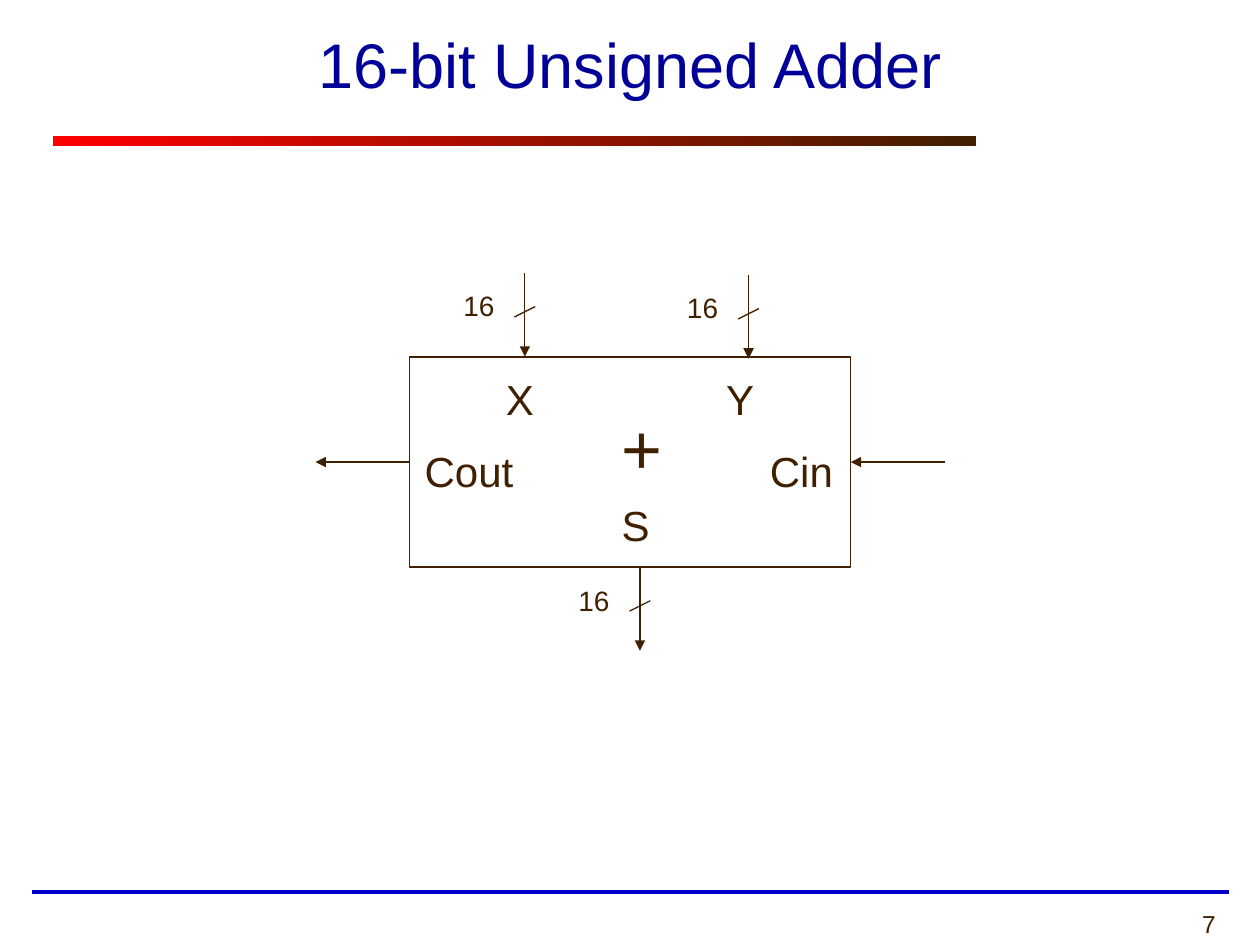
from dataclasses import dataclass

from lxml import etree
from pptx import Presentation
from pptx.dml.color import RGBColor
from pptx.enum import shapes, text
from pptx.oxml import ns
from pptx.util import Cm, Pt


@dataclass(frozen=True)
class Theme:
    font: str = "Arial"
    ink: RGBColor = RGBColor(0x40, 0x20, 0x00)
    title: RGBColor = RGBColor(0x00, 0x00, 0x99)
    rule: RGBColor = RGBColor(0x00, 0x00, 0xCC)
    accent: RGBColor = RGBColor(0xFF, 0x00, 0x00)
    title_size: int = 36
    operator_size: int = 40
    port_size: int = 24
    width_size: int = 16
    page_size: int = 14
    wire: float = 0.75
    footer: float = 2.25


THEME = Theme()
ADDER = (8.26, 7.2, 8.89, 4.23)
HANGING = {"marL": Cm(3.18), "indent": Cm(-0.64)}
BUSES = [(10.58, 5.5), (15.09, 5.54), (12.9, 11.43)]  # x, top
PORTS = [  # name, left, top, width
    ("X", 7.41, 7.41, 3.6),
    ("Y", 11.85, 7.41, 3.6),
    ("S", 9.74, 9.95, 3.6),
    ("Cin", 12.73, 8.86, 4.32),
    ("Cout", 5.77, 8.86, 4.85),
]


def apply(target, values):
    for name, value in values.items():
        setattr(target, name, value)


def style_font(font, size, color):
    apply(font, {"name": THEME.font, "size": Pt(size), "bold": False})
    font.color.rgb = color


def add_title(slide, wording):
    title = slide.shapes.title
    apply(title, {"left": Cm(1.06), "top": Cm(0),
                  "width": Cm(23.28), "height": Cm(2.54)})
    title.text_frame.text = wording
    title.text_frame.vertical_anchor = text.MSO_ANCHOR.MIDDLE
    heading = title.text_frame.paragraphs[0]
    heading.alignment = text.PP_ALIGN.CENTER
    style_font(heading.runs[0].font, THEME.title_size, THEME.title)


def add_label(slide, wording, box, size, indents=None, **frame_format):
    """Add one line of text with a fifth of a line of space before it."""
    frame = slide.shapes.add_textbox(*map(Cm, box)).text_frame
    apply(frame, {"word_wrap": False,
                  "auto_size": text.MSO_AUTO_SIZE.SHAPE_TO_FIT_TEXT,
                  **frame_format})
    line = frame.paragraphs[0]
    run = line.add_run()
    run.text = wording
    style_font(run.font, size, THEME.ink)
    properties = line._p.get_or_add_pPr()
    for name, value in (indents or {}).items():
        properties.set(name, str(value))
    before = etree.SubElement(properties, ns.qn("a:spcBef"))
    etree.SubElement(before, ns.qn("a:spcPct")).set("val", "20000")
    return line


def add_line(slide, start, end, color=THEME.ink, width=THEME.wire, arrow=False):
    line = slide.shapes.add_connector(
        shapes.MSO_CONNECTOR.STRAIGHT, *map(Cm, start + end))
    line.line.color.rgb = color
    line.line.width = Pt(width)
    if arrow:
        outline = line.line._get_or_add_ln()
        etree.SubElement(outline, ns.qn("a:tailEnd")).set("type", "triangle")
    etree.SubElement(line._element.spPr, ns.qn("a:effectLst"))


def add_box(slide, box):
    rectangle = slide.shapes.add_shape(
        shapes.MSO_SHAPE.RECTANGLE, *map(Cm, box))
    rectangle.shadow.inherit = False
    return rectangle


def add_title_bar(slide):
    bar = add_box(slide, (1.06, 2.74, 18.62, 0.21))
    bar.line.fill.background()
    bar.fill.gradient()
    bar.fill.gradient_angle = 0
    for stop, color in zip(bar.fill.gradient_stops, (THEME.accent, THEME.ink)):
        stop.color.rgb = color


def add_adder(slide):
    adder = add_box(slide, ADDER)
    adder.fill.background()
    adder.line.color.rgb = THEME.ink
    adder.line.width = Pt(THEME.wire)


def add_bus(slide, x, top):
    """Add a downward arrow with a slash and its width in bits."""
    add_line(slide, (x, top), (x, top + 1.69), arrow=True)
    add_line(slide, (x - 0.21, top + 0.89), (x + 0.21, top + 0.68))
    add_label(slide, "16", (x - 4.03, top + 0.2, 3.68, 0.94),
              THEME.width_size, HANGING)


def add_carries(slide):
    left, top, width, height = ADDER
    middle = top + height / 2
    for start in (left + width + 1.9, left):
        add_line(slide, (start, middle), (start - 1.9, middle), arrow=True)


def main():
    deck = Presentation()
    apply(deck, {"slide_width": Cm(25.4), "slide_height": Cm(19.05)})
    slide = deck.slides.add_slide(deck.slide_layouts[5])

    add_line(slide, (0.64, 17.98), (24.77, 17.98), THEME.rule, THEME.footer)
    add_title_bar(slide)
    page = add_label(slide, "7", (19.26, 18.2, 5.5, 0.85),
                     THEME.page_size, word_wrap=True)
    page.alignment = text.PP_ALIGN.RIGHT
    add_title(slide, "16-bit Unsigned Adder")

    add_adder(slide)
    for x, top in BUSES:
        add_bus(slide, x, top)
    add_carries(slide)
    for name, left, top, width in PORTS:
        add_label(slide, name, (left, top, width, 1.27),
                  THEME.port_size, HANGING)
    add_label(slide, "+", (12.28, 8.04, 1.35, 1.95), THEME.operator_size)

    deck.save("out.pptx")


if __name__ == "__main__":
    main()
